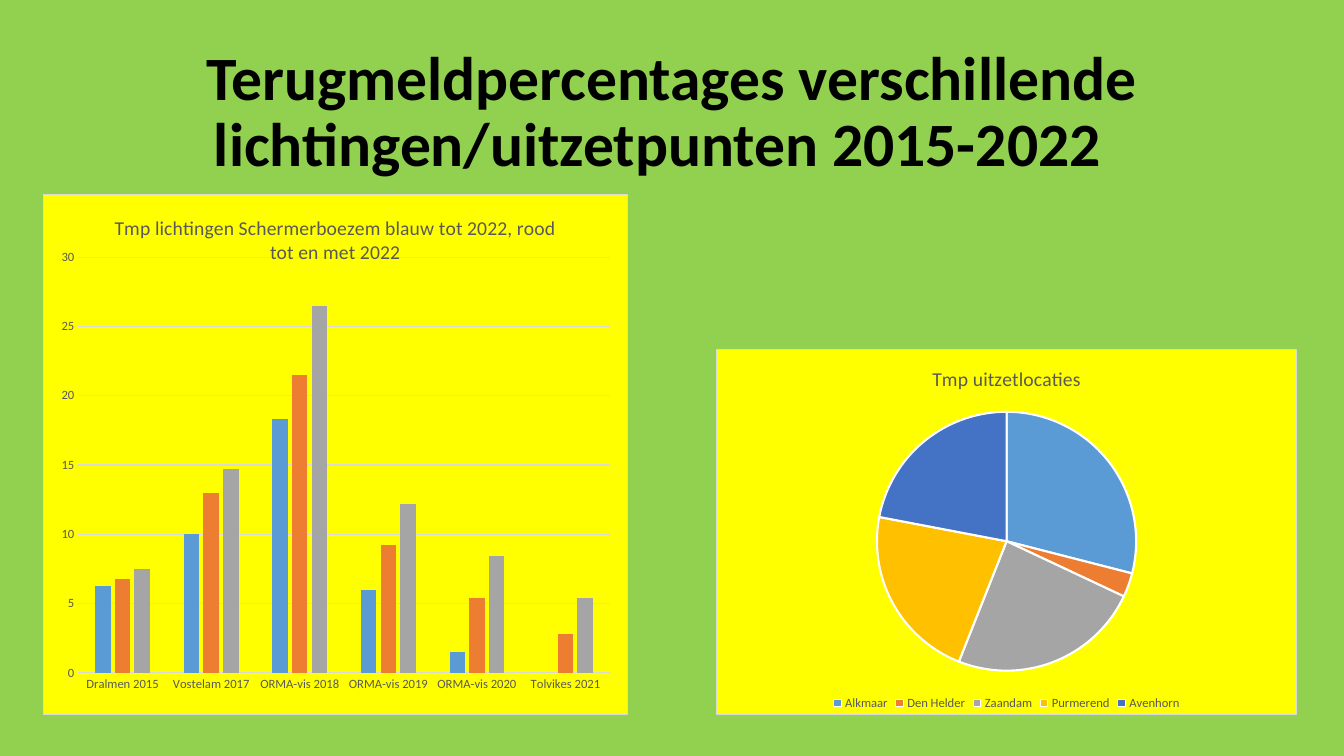
import pptx
import pptx.chart.data
import pptx.dml.color
import pptx.enum.chart
import pptx.enum.text
import pptx.oxml
import pptx.oxml.ns
import pptx.util

Pt = pptx.util.Pt
kinds = pptx.enum.chart
font = "Calibri"
hues = {
    "green": "92D050", "yellow": "FFFF00", "black": "000000", "white": "FFFFFF",
    "text": "595959", "rule": "D9D9D9", "blue": "5B9BD5", "orange": "ED7D31",
    "grey": "A5A5A5", "gold": "FFC000", "navy": "4472C4",
}


def color(name):
    return pptx.dml.color.RGBColor.from_string(hues[name])


def style(font_obj, size, hue="text", bold=False):
    font_obj.name = font
    font_obj.size = Pt(size)
    font_obj.bold = bold
    font_obj.color.rgb = color(hue)


def write(frame, text, size=14, hue="text", bold=False, lines=None):
    par = frame.paragraphs[0]
    par.alignment = pptx.enum.text.PP_ALIGN.CENTER
    par.line_spacing = lines
    run = par.add_run()
    run.text = text
    style(run.font, size, hue, bold)


def paint(fill, hue):
    fill.solid()
    fill.fore_color.rgb = color(hue)


def rule(line, hue="rule", width=0.75):
    line.color.rgb = color(hue)
    line.width = Pt(width)


def panel(chart):
    """Fill and frame the whole chart area."""
    space = chart.element
    props = pptx.oxml.parse_xml(
        f'<c:spPr {pptx.oxml.ns.nsdecls("c", "a")}>'
        f'<a:solidFill><a:srgbClr val="{hues["yellow"]}"/></a:solidFill>'
        f'<a:ln w="{Pt(0.75)}"><a:solidFill><a:srgbClr val="{hues["rule"]}"/>'
        '</a:solidFill></a:ln></c:spPr>')
    space.find(pptx.oxml.ns.qn("c:chart")).addnext(props)


def place(chart, x, y, w, h):
    """Set the inner plot area as fractions of the chart."""
    area = chart.element.find(".//" + pptx.oxml.ns.qn("c:plotArea"))
    for old in area.findall(pptx.oxml.ns.qn("c:layout")):
        area.remove(old)
    sizes = "".join(f'<c:{key} val="{val}"/>'
                    for key, val in zip("xywh", (x, y, w, h)))
    area.insert(0, pptx.oxml.parse_xml(
        f'<c:layout {pptx.oxml.ns.nsdecls("c")}><c:manualLayout>'
        '<c:layoutTarget val="inner"/><c:xMode val="edge"/><c:yMode val="edge"/>'
        f'{sizes}</c:manualLayout></c:layout>'))


def graph(slide, box, kind, title, cats, rows):
    """Add a chart with its title and panel."""
    data = pptx.chart.data.CategoryChartData()
    data.categories = cats
    for num, vals in enumerate(rows, 1):
        data.add_series(f"Series {num}", vals)
    chart = slide.shapes.add_chart(kind, *map(Pt, box), data).chart
    style(chart.font, 10, "black")
    write(chart.chart_title.text_frame, title)
    chart.has_legend = False
    panel(chart)
    return chart


def header(slide, box):
    title = slide.shapes.title
    title.left, title.top, title.width, title.height = map(Pt, box)
    frame = title.text_frame
    frame.word_wrap = True
    frame.auto_size = pptx.enum.text.MSO_AUTO_SIZE.NONE
    frame.vertical_anchor = pptx.enum.text.MSO_ANCHOR.MIDDLE
    write(frame, "Terugmeldpercentages verschillende lichtingen/uitzetpunten 2015-2022  ",
          size=44, hue="black", bold=True, lines=0.9)


def bars(slide, box):
    cats = ["Dralmen 2015", "Vostelam 2017", "ORMA-vis 2018",
            "ORMA-vis 2019", "ORMA-vis 2020", "Tolvikes 2021"]
    rows = [(6.3, 10, 18.3, 6, 1.5, None),
            (6.8, 13, 21.5, 9.2, 5.4, 2.8),
            (7.5, 14.7, 26.5, 12.2, 8.4, 5.4)]
    chart = graph(slide, box, kinds.XL_CHART_TYPE.COLUMN_CLUSTERED,
                  "Tmp lichtingen Schermerboezem blauw tot 2022, rood tot en met 2022",
                  cats, rows)
    place(chart, 0.06, 0.12, 0.91, 0.8)
    plot = chart.plots[0]
    plot.vary_by_categories = False
    plot.gap_width = 219
    plot.overlap = -27
    for ser, hue in zip(plot.series, ("blue", "orange", "grey")):
        paint(ser.format.fill, hue)
    # Axes
    for axis in (chart.category_axis, chart.value_axis):
        axis.major_tick_mark = axis.minor_tick_mark = kinds.XL_TICK_MARK.NONE
        style(axis.tick_labels.font, 9)
    rule(chart.category_axis.format.line)
    scale = chart.value_axis
    scale.minimum_scale, scale.maximum_scale, scale.major_unit = 0, 30, 5
    scale.format.line.fill.background()
    rule(scale.major_gridlines.format.line)


def pie(slide, box):
    cats = ["Alkmaar", "Den Helder", "Zaandam", "Purmerend", "Avenhorn"]
    chart = graph(slide, box, kinds.XL_CHART_TYPE.PIE, "Tmp uitzetlocaties",
                  cats, [(29, 3, 24, 22, 22)])
    plot = chart.plots[0]
    plot.vary_by_categories = True
    for num, hue in enumerate(("blue", "orange", "grey", "gold", "navy")):
        part = plot.series[0].points[num].format
        paint(part.fill, hue)
        rule(part.line, "white", 1.5)
    # Legend
    chart.has_legend = True
    chart.legend.position = kinds.XL_LEGEND_POSITION.BOTTOM
    chart.legend.include_in_layout = False
    style(chart.legend.font, 9)


def main():
    deck = pptx.Presentation()
    deck.slide_width, deck.slide_height = Pt(960), Pt(540)
    slide = deck.slides.add_slide(deck.slide_layouts[5])
    paint(slide.background.fill, "green")
    header(slide, (66, 28.75, 828, 104.4))
    bars(slide, (30.5, 138.75, 418, 372))
    pie(slide, (511.5, 249.25, 415, 261.5))
    deck.save("out.pptx")


if __name__ == "__main__":
    main()
